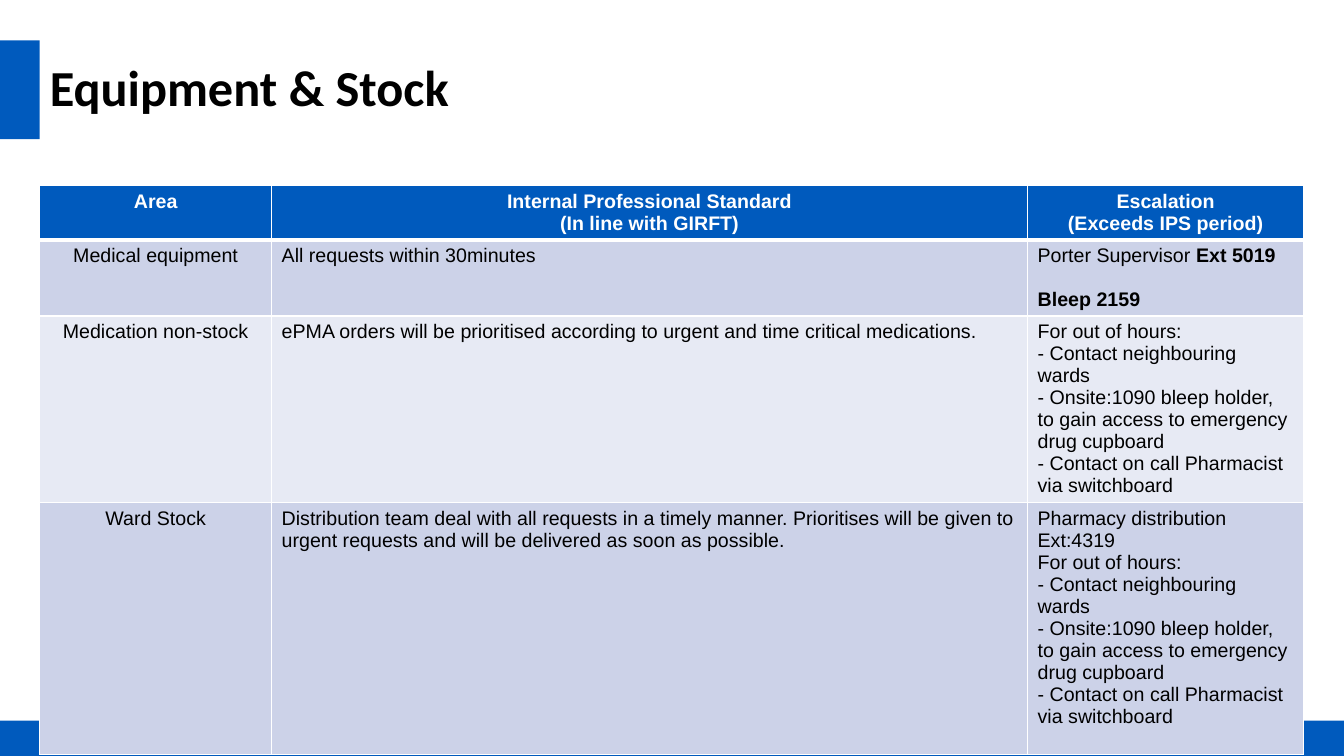
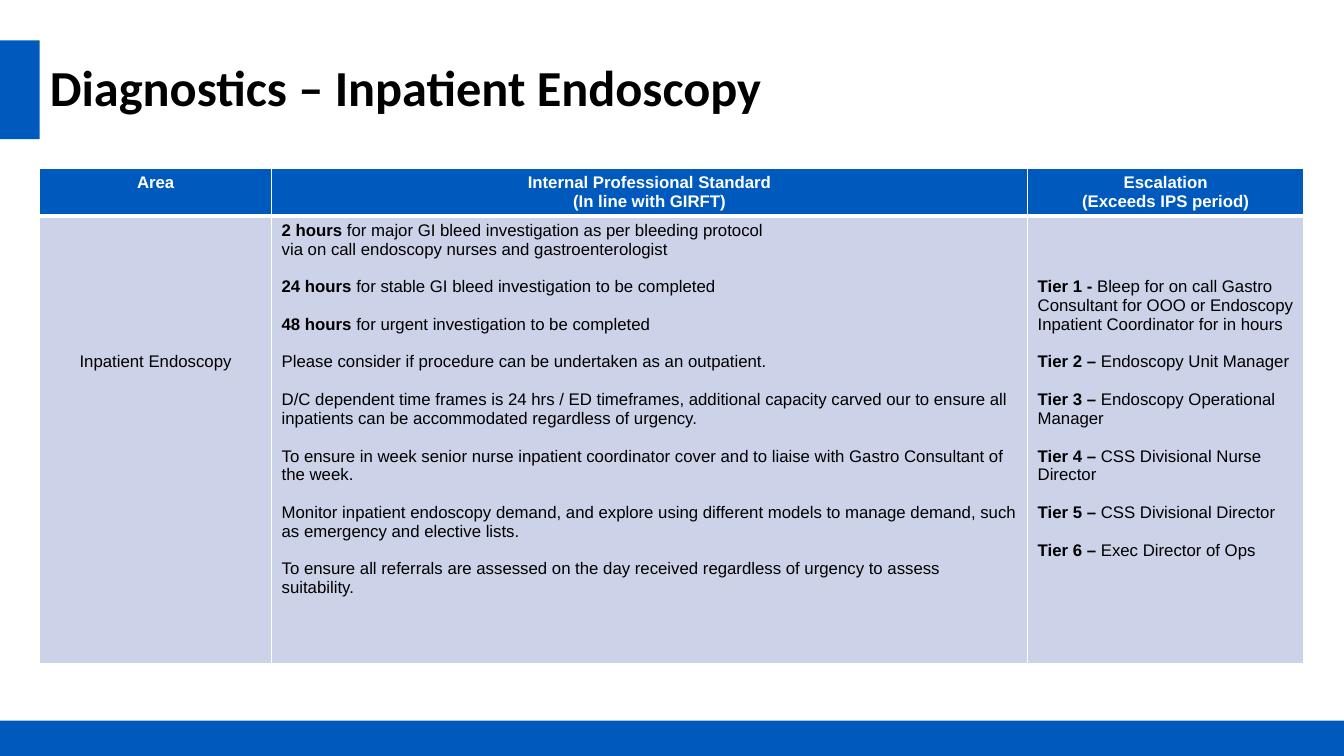
from dataclasses import dataclass

from lxml import etree
from pptx import Presentation
from pptx.dml.color import RGBColor
from pptx.enum import shapes, text
from pptx.oxml import ns
from pptx.util import Pt


@dataclass(frozen=True)
class Theme:
    blue: str = "005ABD"
    white: str = "FFFFFF"
    black: str = "000000"
    bands: tuple = ("CCD2E8", "E7EAF4")
    title_font: str = "Calibri"
    body_font: str = "Arial"
    title_size: int = 36
    line_height: float = 1.12


THEME = Theme()
WIDTH, HEIGHT = 960, 540
LEFT = 28.4
TITLE_TOP, TITLE_HEIGHT = 28.8, 70.6
FOOTER_HEIGHT = 25.2
COLUMNS = (165.6, 540, 197.3)
THIN, THICK = 1, 3
CENTER, START = text.PP_ALIGN.CENTER, text.PP_ALIGN.LEFT

HEADINGS = (
    ["Area"],
    ["Internal Professional Standard\n(In line with GIRFT)"],
    ["Escalation\n(Exceeds IPS period)"],
)
OUT_OF_HOURS = (
    "For out of hours:\n"
    "- Contact neighbouring wards\n"
    "- Onsite:1090 bleep holder, to gain access to emergency drug cupboard\n"
    "- Contact on call Pharmacist via switchboard"
)
STOCK_ROWS = (
    (["Medical equipment"],
     ["All requests within 30minutes"],
     ["Porter Supervisor *Ext 5019*", "*Bleep 2159*"]),
    (["Medication non-stock"],
     ["ePMA orders will be prioritised according to urgent and time critical medications."],
     [OUT_OF_HOURS]),
    (["Ward Stock"],
     ["Distribution team deal with all requests in a timely manner. Prioritises will be "
      "given to urgent requests and will be delivered as soon as possible."],
     ["Pharmacy distribution Ext:4319\n" + OUT_OF_HOURS]),
)
ENDOSCOPY_ROWS = (
    (["Inpatient Endoscopy"],
     ["*2 hours* for major GI bleed investigation as per bleeding protocol\n"
      "via on call endoscopy nurses and gastroenterologist",
      "*24 hours* for stable GI bleed investigation to be completed",
      "*48 hours* for urgent investigation to be completed",
      "Please consider if procedure can be undertaken as an outpatient.",
      "D/C dependent time frames is 24 hrs / ED timeframes, additional capacity carved our "
      "to ensure all inpatients can be accommodated regardless of urgency.",
      "To ensure in week senior nurse inpatient coordinator cover and to liaise with Gastro "
      "Consultant of the week.",
      "Monitor inpatient endoscopy demand, and explore using different models to manage "
      "demand, such as emergency and elective lists.",
      "To ensure all referrals are assessed on the day received regardless of urgency to "
      "assess suitability."],
     ["*Tier 1 -* Bleep for on call Gastro Consultant for OOO or Endoscopy Inpatient "
      "Coordinator for in hours",
      "*Tier 2 –* Endoscopy Unit Manager",
      "*Tier 3 –* Endoscopy Operational Manager",
      "*Tier 4 –* CSS Divisional Nurse Director",
      "*Tier 5 –* CSS Divisional Director",
      "*Tier 6 –* Exec Director of Ops"]),
)


def rgb(color):
    return RGBColor.from_string(color)


def write(tf, blocks, size, font=THEME.body_font, color=THEME.black, bold=False,
          align=START, spacing=None):
    """Blocks are set one line apart; asterisks enclose bold words."""
    tf.word_wrap = True
    lines = [(line, b > 0 and n == 0)
             for b, block in enumerate(blocks)
             for n, line in enumerate(block.split("\n"))]
    for i, (line, gap) in enumerate(lines):
        p = tf.add_paragraph() if i else tf.paragraphs[0]
        p.alignment = align
        p.space_before = Pt(round(size * THEME.line_height, 2) if gap else 0)
        if spacing:
            p.line_spacing = spacing
        for n, part in enumerate(line.split("*")):
            if part:
                r = p.add_run()
                r.text = part
                r.font.name = font
                r.font.size = Pt(size)
                r.font.bold = bold or n % 2 == 1
                r.font.color.rgb = rgb(color)


def add_band(s, left, top, width, height):
    sp = s.shapes.add_shape(shapes.MSO_SHAPE.RECTANGLE,
                            Pt(left), Pt(top), Pt(width), Pt(height))
    sp.shadow.inherit = False
    sp.fill.solid()
    sp.fill.fore_color.rgb = rgb(THEME.blue)
    sp.line.fill.background()


def add_titled_slide(prs, title):
    s = prs.slides.add_slide(prs.slide_layouts[5])
    add_band(s, 0, TITLE_TOP, LEFT, TITLE_HEIGHT)
    add_band(s, 0, HEIGHT - FOOTER_HEIGHT, WIDTH, FOOTER_HEIGHT)
    sp = s.shapes.title
    sp.left, sp.top = Pt(LEFT), Pt(TITLE_TOP)
    sp.width, sp.height = Pt(776), Pt(TITLE_HEIGHT)
    tf = sp.text_frame
    tf.auto_size = text.MSO_AUTO_SIZE.NONE
    tf.vertical_anchor = text.MSO_ANCHOR.MIDDLE
    write(tf, [title], THEME.title_size, font=THEME.title_font, bold=True, spacing=0.9)
    return s


def set_borders(cell, **widths):
    tc_pr = cell._tc.get_or_add_tcPr()
    for side in "LRTB":
        ln = etree.SubElement(tc_pr, ns.qn(f"a:ln{side}"), w=str(Pt(widths.get(side, THIN))))
        fill = etree.SubElement(ln, ns.qn("a:solidFill"))
        etree.SubElement(fill, ns.qn("a:srgbClr"), val=THEME.white)


def add_standards_table(s, top, rows, heights, size, blank_lines=(0, 0, 0)):
    tbl = s.shapes.add_table(len(heights), len(COLUMNS), Pt(LEFT), Pt(top),
                             Pt(sum(COLUMNS)), Pt(sum(heights))).table
    tbl.horz_banding = False
    for column, width in zip(tbl.columns, COLUMNS):
        column.width = Pt(width)
    for i, (row, height) in enumerate(zip((HEADINGS, *rows), heights)):
        tbl.rows[i].height = Pt(height)
        header = i == 0
        for j, blocks in enumerate(row):
            cell = tbl.cell(i, j)
            set_borders(cell, T=THICK if i == 1 else THIN, B=THICK if header else THIN)
            cell.fill.solid()
            cell.fill.fore_color.rgb = rgb(THEME.blue if header else THEME.bands[(i - 1) % 2])
            if not header:
                cell.margin_top = Pt(round(3.6 + blank_lines[j] * size * THEME.line_height, 2))
            write(cell.text_frame, blocks, size, bold=header,
                  color=THEME.white if header else THEME.black,
                  align=CENTER if header or j == 0 else START)


def main():
    prs = Presentation()
    prs.slide_width, prs.slide_height = Pt(WIDTH), Pt(HEIGHT)
    s = add_titled_slide(prs, "Equipment & Stock")
    add_standards_table(s, 132.5, STOCK_ROWS, (38.8, 54.4, 133.2, 180), 14)
    s = add_titled_slide(prs, "Diagnostics – Inpatient Endoscopy")
    add_standards_table(s, 120.2, ENDOSCOPY_ROWS, (34, 320), 12, blank_lines=(7, 0, 3))
    prs.save("out.pptx")


if __name__ == "__main__":
    main()
